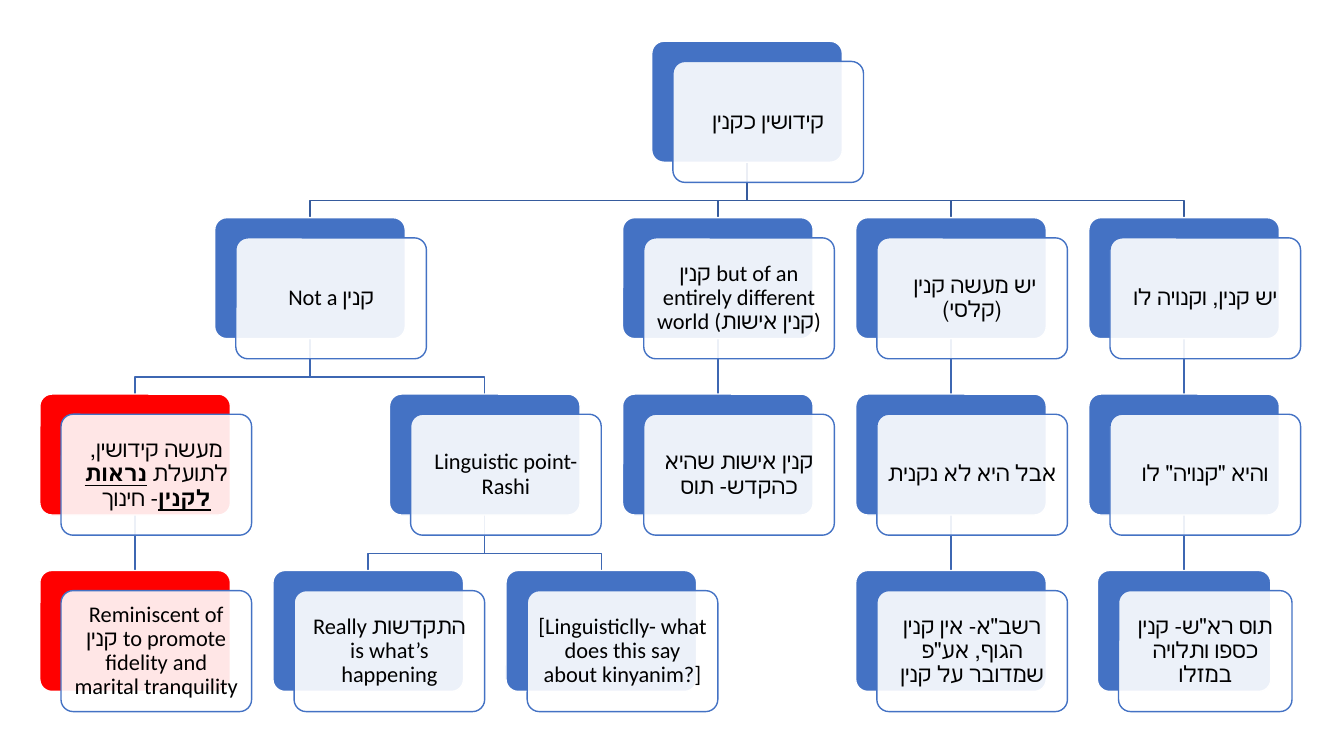
from dataclasses import dataclass, field

import pptx
import pptx.dml.color
import pptx.enum.shapes
import pptx.enum.text
import pptx.oxml
import pptx.oxml.ns
import pptx.util
from pptx.util import Inches

BLUE = pptx.dml.color.RGBColor(0x44, 0x72, 0xC4)
RED = pptx.dml.color.RGBColor(0xFF, 0x00, 0x00)
WHITE = pptx.dml.color.RGBColor(0xFF, 0xFF, 0xFF)
BLACK = pptx.dml.color.RGBColor(0x00, 0x00, 0x00)
TOP_LINK = pptx.dml.color.RGBColor(0x36, 0x5B, 0x9D)
LOWER_LINK = pptx.dml.color.RGBColor(0x3E, 0x67, 0xB2)

# Grid, in inches
TOP, ROW_STEP = 0.41, 1.75
FIRST_CENTER, COLUMN_STEP = 1.34, 2.312
CARD_HEIGHT = 1.2
OFFSET_X, OFFSET_Y = 0.21, 0.2
BEND = 0.38  # from the bottom of a parent to the bend of its links


@dataclass
class Node:
    """A card; leaves have a column, parents are centred over their children."""
    text: str
    column: float = 0
    children: list["Node"] = field(default_factory=list)
    color: pptx.dml.color.RGBColor = BLUE
    width: float = 1.89
    emphasis: str = ""

    @property
    def center(self) -> float:
        if self.children:
            return (self.children[0].center + self.children[-1].center) / 2
        return FIRST_CENTER + COLUMN_STEP * self.column


TREE = Node("קידושין כקנין", children=[
    Node("Not a קנין", children=[
        Node("מעשה קידושין, לתועלת נראות לקנין- חינוך", color=RED, emphasis="נראות לקנין", children=[
            Node("Reminiscent of קנין to promote fidelity and marital tranquility", 0, color=RED),
        ]),
        Node("Linguistic point- Rashi", children=[
            Node("Really התקדשות is what’s happening", 1),
            Node("[Linguisticlly- what does this say about kinyanim?]", 2),
        ]),
    ]),
    Node("קנין but of an entirely different world (קנין אישות)", children=[
        Node("קנין אישות שהיא כהקדש- תוס", 2.5),
    ]),
    Node(" יש מעשה קנין (קלסי)", children=[
        Node("אבל היא לא נקנית", children=[
            Node('רשב"א- אין קנין הגוף, אע"פ שמדובר על קנין', 3.5),
        ]),
    ]),
    Node("יש קנין, וקנויה לו", children=[
        Node('והיא "קנויה" לו', children=[
            Node('תוס רא"ש- קנין כספו ותלויה במזלו', 4.5, width=1.72),
        ]),
    ]),
])


def add_panel(s, left: float, top: float, width: float, fill, line):
    sp = s.shapes.add_shape(pptx.enum.shapes.MSO_SHAPE.ROUNDED_RECTANGLE, Inches(left),
                            Inches(top), Inches(width), Inches(CARD_HEIGHT))
    sp.adjustments[0] = 0.1
    sp.shadow.inherit = False
    sp.fill.solid()
    sp.fill.fore_color.rgb = fill
    sp.line.color.rgb = line
    sp.line.width = pptx.util.Pt(1)
    return sp


def write_text(sp, node: Node) -> None:
    tf = sp.text_frame
    tf.word_wrap = True
    tf.vertical_anchor = pptx.enum.text.MSO_ANCHOR.MIDDLE
    tf.margin_left = tf.margin_right = tf.margin_top = tf.margin_bottom = Inches(0.07)
    p = tf.paragraphs[0]
    p.alignment = pptx.enum.text.PP_ALIGN.CENTER
    p.line_spacing = 0.9
    parts = node.text.partition(node.emphasis) if node.emphasis else (node.text,)
    for part in parts:
        r = p.add_run()
        r.text = part
        r.font.name = "Calibri"
        r.font.size = pptx.util.Pt(16)
        r.font.color.rgb = BLACK
        if part == node.emphasis:
            r.font.bold = r.font.underline = True


def add_card(s, node: Node, top: float):
    """Draw the coloured back panel and the translucent text panel over it."""
    left = node.center - node.width / 2
    back = add_panel(s, left, top, node.width, node.color, WHITE)
    front = add_panel(s, left + OFFSET_X, top + OFFSET_Y, node.width, WHITE, BLUE)
    color = front.fill._xPr.find(".//" + pptx.oxml.ns.qn("a:srgbClr"))
    color.append(pptx.oxml.parse_xml(
        f'<a:alpha {pptx.oxml.ns.nsdecls("a")} val="90000"/>'))
    write_text(front, node)
    return back


def add_link(s, parent: Node, child: Node, parent_card, child_card, top: float, color) -> None:
    start = top + CARD_HEIGHT
    if abs(parent.center - child.center) < 0.01:
        link = s.shapes.add_connector(pptx.enum.shapes.MSO_CONNECTOR.STRAIGHT, 0, 0, 0, 0)
        link.begin_connect(parent_card, 2)
        link.end_connect(child_card, 0)
        link._element.spPr.append(pptx.oxml.parse_xml(
            f'<a:effectLst {pptx.oxml.ns.nsdecls("a")}/>'))
    else:
        builder = s.shapes.build_freeform(Inches(parent.center), Inches(start))
        corners = [(parent.center, start + BEND), (child.center, start + BEND),
                   (child.center, top + ROW_STEP)]
        builder.add_line_segments([(Inches(x), Inches(y)) for x, y in corners], close=False)
        link = builder.convert_to_shape()
        link.fill.background()
        link.shadow.inherit = False
    link.line.color.rgb = color
    link.line.width = pptx.util.Pt(1)
    # Links lie behind all the cards
    s.shapes._spTree.insert(2, link._element)


def add_branch(s, node: Node, level: int = 0):
    top = TOP + ROW_STEP * level
    card = add_card(s, node, top)
    for child in node.children:
        child_card = add_branch(s, child, level + 1)
        add_link(s, node, child, card, child_card, top, LOWER_LINK if level else TOP_LINK)
    return card


def main() -> None:
    prs = pptx.Presentation()
    prs.slide_width, prs.slide_height = Inches(13.33), Inches(7.5)
    s = prs.slides.add_slide(prs.slide_layouts[6])
    add_branch(s, TREE)
    prs.save("out.pptx")


if __name__ == "__main__":
    main()
